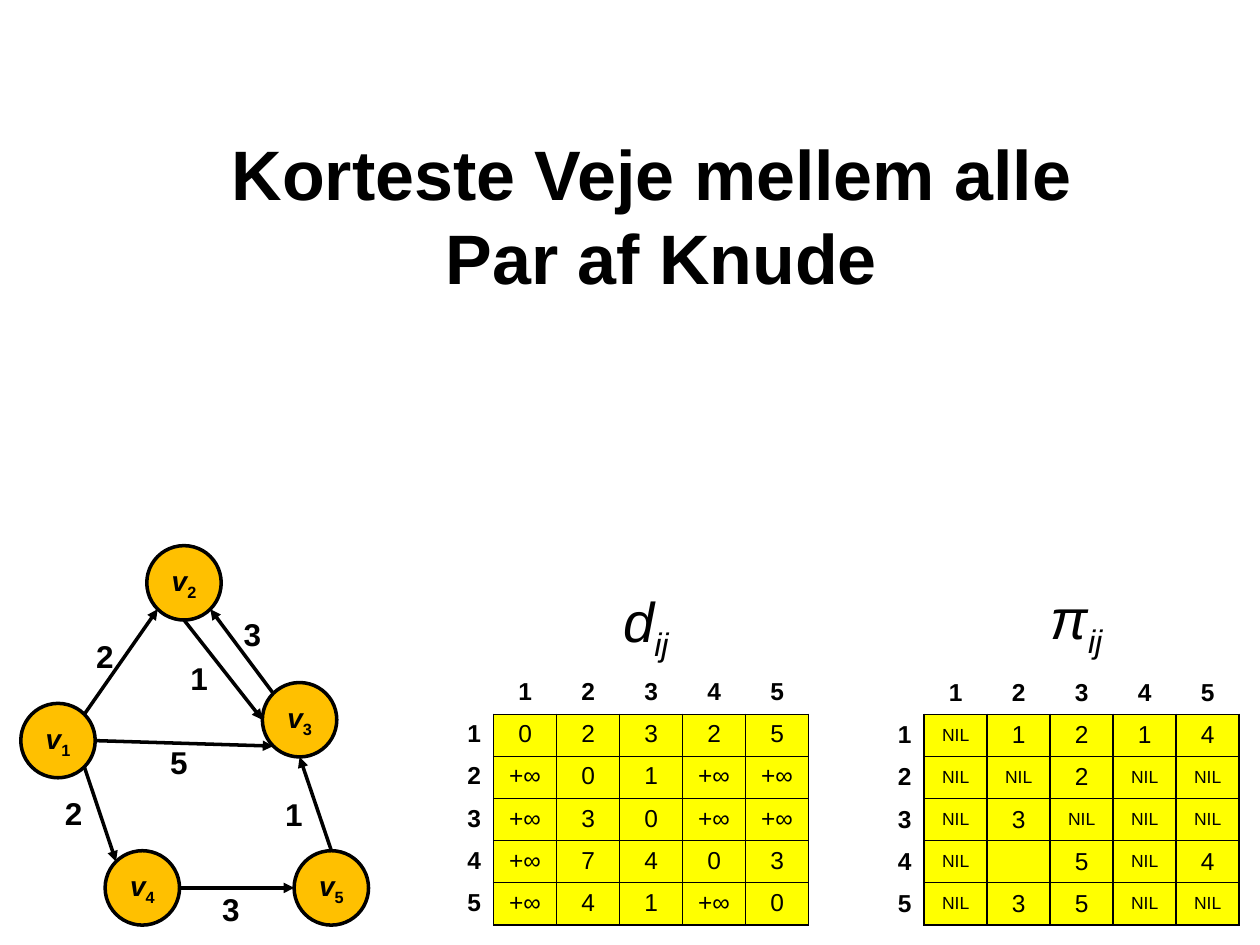
from math import cos, radians, sin

from pptx import Presentation
from pptx.dml.color import RGBColor
from pptx.enum.shapes import MSO_CONNECTOR, MSO_SHAPE
from pptx.enum.text import MSO_ANCHOR, PP_ALIGN
from pptx.oxml.ns import qn
from pptx.util import Cm, Pt
from lxml.etree import SubElement

BLACK, WHITE, ORANGE, YELLOW = "000000", "FFFFFF", "FFC000", "FFFF00"
LEFT, MID, RIGHT = PP_ALIGN.LEFT, PP_ALIGN.CENTER, PP_ALIGN.RIGHT
SIZE = 1.5  # node diameter in cm

# Top left corner of each node
NODES = {"1": (0.42, 14.18), "2": (2.96, 11), "3": (5.29, 13.76),
         "4": (2.12, 17.15), "5": (5.93, 17.15)}

# Start node and side, end node and side
EDGES = [("3", "NW", "2", "SE"), ("1", "NE", "2", "SW"), ("1", "SE", "4", "NW"),
         ("2", "S", "3", "W"), ("4", "E", "5", "W"), ("1", "E", "3", "SW"),
         ("5", "N", "3", "S")]
SIDES = ["E", "NE", "N", "NW", "W", "SW", "S", "SE"]

# Weight, left, top, width, alignment
WEIGHTS = [("2", 1.06, 15.88, 0.85, LEFT), ("2", 1.69, 12.72, 0.85, LEFT),
           ("5", 3.18, 14.86, 0.85, LEFT), ("3", 4.23, 17.81, 0.85, LEFT),
           ("1", 4.66, 15.9, 1.69, RIGHT), ("3", 4.66, 12.27, 0.85, LEFT),
           ("1", 2.96, 13.16, 1.48, RIGHT)]

DIST = [["0", "2", "3", "2", "5"],
        ["+∞", "0", "1", "+∞", "+∞"],
        ["+∞", "3", "0", "+∞", "+∞"],
        ["+∞", "7", "4", "0", "3"],
        ["+∞", "4", "1", "+∞", "0"]]
PRED = [["NIL", "1", "2", "1", "4"],
        ["NIL", "NIL", "2", "NIL", "NIL"],
        ["NIL", "3", "NIL", "NIL", "NIL"],
        ["NIL", "", "5", "NIL", "4"],
        ["NIL", "3", "5", "NIL", "NIL"]]


def rgb(code):
    return RGBColor.from_string(code)


def style(run, size, bold=False, slant=False):
    font = run.font
    font.name, font.size = "Arial", Pt(size)
    font.bold, font.italic = bold, slant
    font.color.rgb = rgb(BLACK)


def lower(run):
    """Make the run a subscript."""
    run.font._element.set("baseline", "-25000")


def add_title(slide):
    title = slide.shapes.title
    title.left, title.top = Cm(1.9), Cm(2.74)
    title.width, title.height = Cm(22.86), Cm(3.18)
    frame = title.text_frame
    frame.text = "Korteste Veje mellem alle \vPar af Knude"
    frame.vertical_anchor = MSO_ANCHOR.MIDDLE
    para = frame.paragraphs[0]
    para.alignment = MID
    for run in para.runs:
        style(run, 40, bold=True)


def add_index(para, name, sub, size, bold, slant):
    """Write a slanted name with a subscript."""
    para.alignment = MID
    for text, tilt in ((name, True), (sub, slant)):
        run = para.add_run()
        run.text = text
        style(run, size, bold, tilt)
    lower(run)


def add_node(slide, num):
    left, top = NODES[num]
    node = slide.shapes.add_shape(MSO_SHAPE.OVAL, Cm(left), Cm(top), Cm(SIZE), Cm(SIZE))
    node.shadow.inherit = False
    node.fill.solid()
    node.fill.fore_color.rgb = rgb(ORANGE)
    node.line.color.rgb = rgb(BLACK)
    node.line.width = Pt(2)
    frame = node.text_frame
    frame.word_wrap = False
    frame.vertical_anchor = MSO_ANCHOR.MIDDLE
    frame.margin_left = frame.margin_right = 0
    add_index(frame.paragraphs[0], "v", num, 16, True, False)


def rim(num, side):
    """Give the point on a node's rim at a compass side."""
    left, top = NODES[num]
    turn, half = radians(45 * SIDES.index(side)), SIZE / 2
    return Cm(left + half + half * cos(turn)), Cm(top + half - half * sin(turn))


def add_edge(slide, start, out, end, side):
    edge = slide.shapes.add_connector(MSO_CONNECTOR.STRAIGHT, *rim(start, out), *rim(end, side))
    edge.line.color.rgb = rgb(BLACK)
    edge.line.width = Pt(2)
    SubElement(edge.line._get_or_add_ln(), qn("a:tailEnd"), type="triangle")
    SubElement(edge._element.spPr, qn("a:effectLst"))


def add_box(slide, left, top, width, height):
    box = slide.shapes.add_textbox(Cm(left), Cm(top), Cm(width), Cm(height))
    box.text_frame.word_wrap = True
    return box.text_frame


def add_weight(slide, text, left, top, width, align):
    frame = add_box(slide, left, top, width, 1.02)
    frame.text = text
    para = frame.paragraphs[0]
    para.alignment = align
    style(para.runs[0], 18, bold=True)


def add_head(slide, name, left, top):
    frame = add_box(slide, left, top, 3.6, 1.63)
    add_index(frame.paragraphs[0], name, "ij", 32, False, True)


def set_edges(cell, row, col):
    """Draw black edges on all sides that touch a value cell, white ones elsewhere."""
    props = cell._tc.get_or_add_tcPr()
    inner = row > 0 and col > 0
    for side in "LRTB":
        dark = inner or (side == "B" and col > 0) or (side == "R" and row > 0)
        line = SubElement(props, qn(f"a:ln{side}"), w=str(Pt(1)))
        fill = SubElement(line, qn("a:solidFill"))
        SubElement(fill, qn("a:srgbClr"), val=BLACK if dark else WHITE)


def set_cell(cell, text, row, col, anchor):
    inner = row > 0 and col > 0
    set_edges(cell, row, col)
    cell.fill.solid()
    cell.fill.fore_color.rgb = rgb(YELLOW if inner else WHITE)
    cell.vertical_anchor = anchor
    cell.text_frame.text = text
    para = cell.text_frame.paragraphs[0]
    para.alignment = RIGHT if col == 0 else MID
    if text:
        style(para.runs[0], 10 if text == "NIL" else 14, bold=not inner)
    else:
        para._p.get_or_add_endParaRPr().set("sz", "1400")


def add_grid(slide, values, left, anchor):
    """Add a matrix with numbered rows and columns."""
    nums = list(NODES)
    rows = [["", *nums]] + [[num, *line] for num, line in zip(nums, values)]
    count = len(rows)
    table = slide.shapes.add_table(count, count, Cm(left), Cm(13.55),
                                   Cm(1.27 * count), Cm(0.85 * count)).table
    table.first_row = table.horz_banding = False
    for row, line in enumerate(rows):
        for col, text in enumerate(line):
            set_cell(table.cell(row, col), text, row, col, anchor)


def main():
    deck = Presentation()
    deck.slide_width, deck.slide_height = Cm(25.4), Cm(19.05)
    slide = deck.slides.add_slide(deck.slide_layouts[5])
    add_title(slide)
    for num in NODES:
        add_node(slide, num)
    for edge in EDGES:
        add_edge(slide, *edge)
    for weight in WEIGHTS:
        add_weight(slide, *weight)
    add_grid(slide, DIST, 8.68, MSO_ANCHOR.TOP)
    add_grid(slide, PRED, 17.36, MSO_ANCHOR.MIDDLE)
    add_head(slide, "d", 11.22, 11.7)
    add_head(slide, "π", 19.9, 11.64)
    deck.save("out.pptx")


if __name__ == "__main__":
    main()
